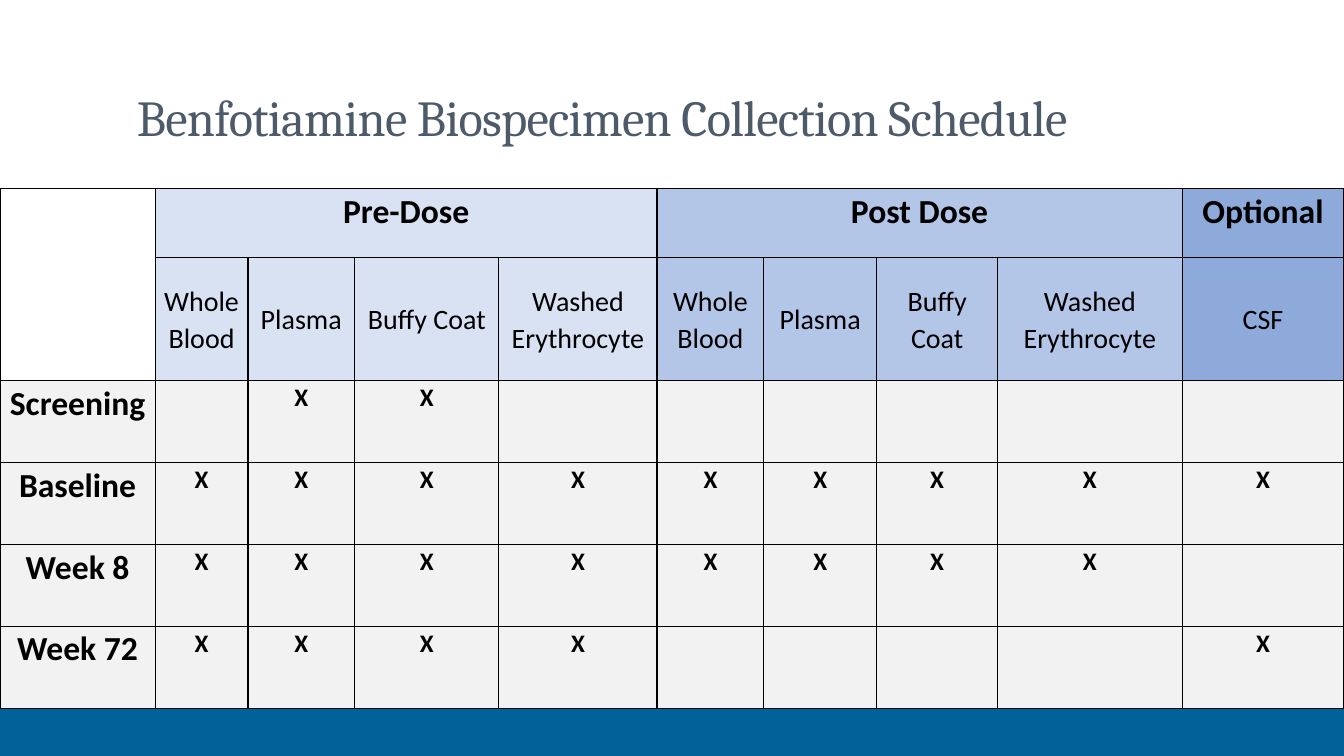
from dataclasses import dataclass

from lxml.etree import SubElement
from pptx import Presentation
from pptx.dml.color import RGBColor
from pptx.enum.shapes import MSO_SHAPE
from pptx.enum.text import MSO_ANCHOR, PP_ALIGN
from pptx.oxml.ns import qn
from pptx.util import Pt


@dataclass(frozen=True)
class Theme:
    title_font: str = "Cambria"
    table_font: str = "Calibri"
    title_size: int = 36
    heading_size: int = 24
    specimen_size: int = 20
    mark_size: int = 18
    title_color: str = "4D5A69"
    ink: str = "000000"
    footer_blue: str = "006298"
    footer_green: str = "00843D"
    pre_dose: str = "D9E2F3"
    post_dose: str = "B4C6E7"
    optional: str = "8EAADB"
    visit: str = "F2F2F2"


theme = Theme()


def style_cell(cell, text, size, fill, bold=True, anchor=MSO_ANCHOR.TOP):
    cell.margin_left = cell.margin_right = Pt(5)
    cell.margin_top = cell.margin_bottom = Pt(0)
    cell.vertical_anchor = anchor
    cell.text = text
    paragraph = cell.text_frame.paragraphs[0]
    paragraph.alignment = PP_ALIGN.CENTER
    paragraph.line_spacing = 1.07
    paragraph.font.name = theme.table_font
    paragraph.font.size = Pt(size)
    paragraph.font.bold = bold
    paragraph.font.color.rgb = RGBColor.from_string(theme.ink)

    # Borders come before the fill in the cell properties
    properties = cell._tc.get_or_add_tcPr()
    for side in ("lnL", "lnR", "lnT", "lnB"):
        border = SubElement(properties, qn(f"a:{side}"), w=str(Pt(1)))
        line_fill = SubElement(border, qn("a:solidFill"))
        SubElement(line_fill, qn("a:srgbClr"), val=theme.ink)
    if fill:
        cell.fill.solid()
        cell.fill.fore_color.rgb = RGBColor.from_string(fill)
    else:
        cell.fill.background()


presentation = Presentation()
presentation.slide_width = Pt(960)
presentation.slide_height = Pt(540)
slide = presentation.slides.add_slide(presentation.slide_layouts[6])

# Footer bands
for top, height, color in ((504, 36, theme.footer_blue), (499, 5, theme.footer_green)):
    band = slide.shapes.add_shape(MSO_SHAPE.RECTANGLE, Pt(0), Pt(top), Pt(960), Pt(height))
    band.shadow.inherit = False
    band.fill.solid()
    band.fill.fore_color.rgb = RGBColor.from_string(color)
    band.line.fill.background()

# Title
title = slide.shapes.add_textbox(Pt(90.7), Pt(44.6), Pt(778.3), Pt(64.1)).text_frame
title.word_wrap = True
title.vertical_anchor = MSO_ANCHOR.BOTTOM
title.text = "Benfotiamine Biospecimen Collection Schedule"
heading = title.paragraphs[0]
heading.line_spacing = 0.85
heading.font.name = theme.title_font
heading.font.size = Pt(theme.title_size)
heading.font.color.rgb = RGBColor.from_string(theme.title_color)
heading.runs[0].font._element.set("spc", "-50")

# Schedule
dose_specimens = ["Whole Blood", "Plasma", "Buffy Coat", "Washed Erythrocyte"]
dose_groups = [
    ("Pre-Dose", theme.pre_dose, dose_specimens),
    ("Post Dose", theme.post_dose, dose_specimens),
    ("Optional", theme.optional, ["CSF"]),
]
visits = [
    ("Screening", "-XX------"),
    ("Baseline", "XXXXXXXXX"),
    ("Week 8", "XXXXXXXX-"),
    ("Week 72", "XXXX----X"),
]
column_widths = [110.9, 66.2, 76.3, 103, 113, 76.3, 80.6, 86.4, 131.8, 115.5]
row_heights = [49.5, 87.8] + [58.5] * len(visits)

schedule = slide.shapes.add_table(
    len(row_heights), len(column_widths),
    Pt(0), Pt(134.6), Pt(sum(column_widths)), Pt(sum(row_heights)),
).table
schedule.first_row = schedule.horz_banding = False
for column, width in zip(schedule.columns, column_widths):
    column.width = Pt(width)
for row, height in zip(schedule.rows, row_heights):
    row.height = Pt(height)

for row in (0, 1):
    style_cell(schedule.cell(row, 0), "", theme.heading_size, None)
schedule.cell(0, 0).merge(schedule.cell(1, 0))

first = 1
for group, color, specimens in dose_groups:
    for column, specimen in enumerate(specimens, first):
        group_label = group if column == first else ""
        style_cell(schedule.cell(0, column), group_label, theme.heading_size, color)
        style_cell(schedule.cell(1, column), specimen, theme.specimen_size, color,
                   bold=False, anchor=MSO_ANCHOR.MIDDLE)
    if len(specimens) > 1:
        schedule.cell(0, first).merge(schedule.cell(0, first + len(specimens) - 1))
    first += len(specimens)

for row, (visit, marks) in enumerate(visits, 2):
    style_cell(schedule.cell(row, 0), visit, theme.heading_size, theme.visit)
    for column, mark in enumerate(marks, 1):
        style_cell(schedule.cell(row, column), mark.strip("-"), theme.mark_size, theme.visit)

presentation.save("out.pptx")
